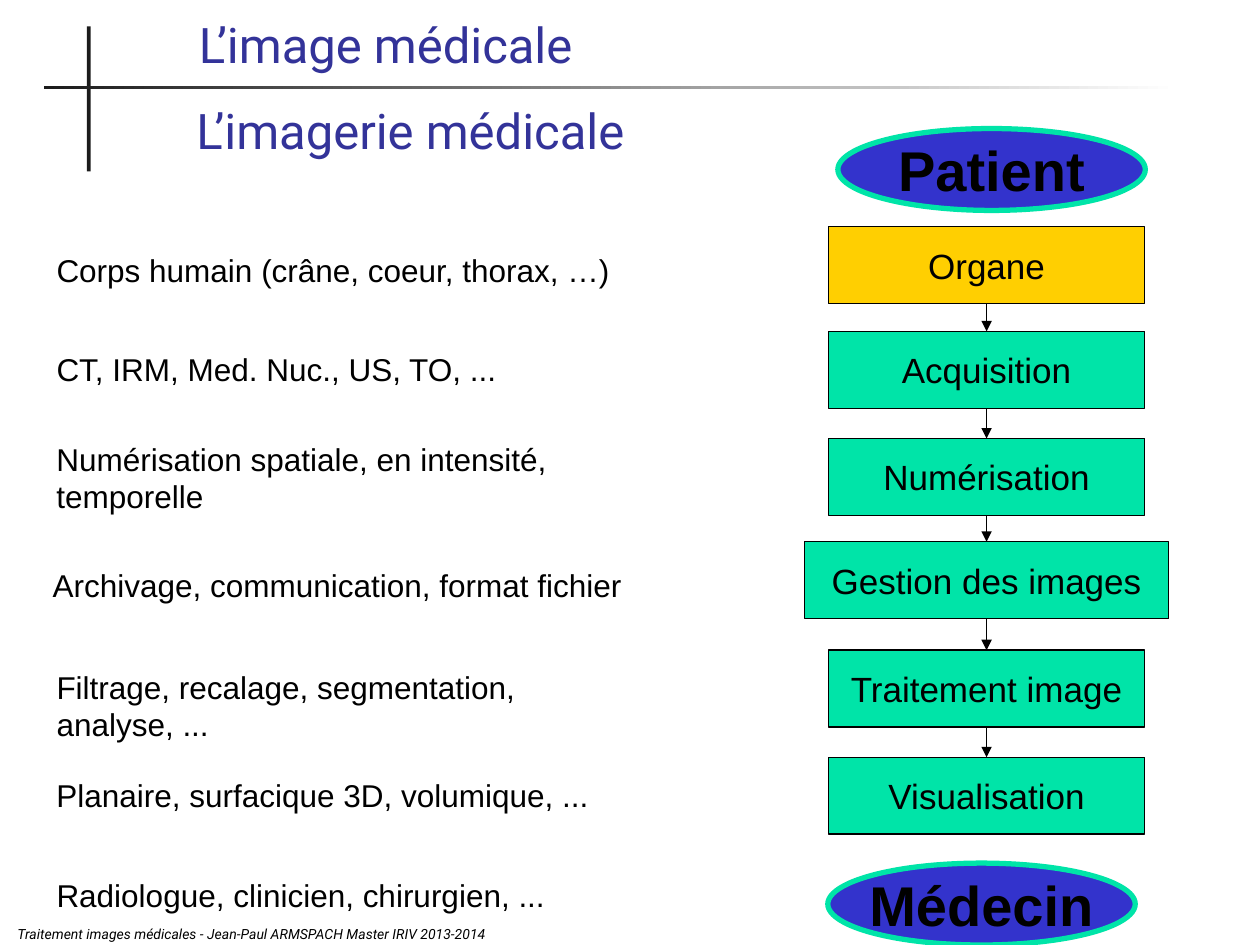
from dataclasses import dataclass

from lxml import etree
from pptx import Presentation
from pptx.dml.color import RGBColor
from pptx.enum.shapes import MSO_CONNECTOR, MSO_SHAPE
from pptx.enum.text import MSO_ANCHOR, PP_ALIGN
from pptx.oxml.ns import qn
from pptx.util import Inches, Pt

RECT, PROCESS, OVAL = MSO_SHAPE.RECTANGLE, MSO_SHAPE.FLOWCHART_PROCESS, MSO_SHAPE.OVAL
STRAIGHT = MSO_CONNECTOR.STRAIGHT
TOP, MIDDLE, BOTTOM = MSO_ANCHOR.TOP, MSO_ANCHOR.MIDDLE, MSO_ANCHOR.BOTTOM
LEFT, CENTER = PP_ALIGN.LEFT, PP_ALIGN.CENTER


@dataclass(frozen=True)
class Theme:
    ink: str = "000000"
    rule: str = "1C1C1C"
    white: str = "FFFFFF"
    title: str = "333399"
    green: str = "00E4A8"
    yellow: str = "FFCF01"
    blue: str = "3333CC"
    head_font: str = "Roboto"
    body_font: str = "Arial"
    title_size: int = 28
    end_size: int = 32
    step_size: int = 20
    caption_size: int = 18
    footer_size: int = 8


@dataclass(frozen=True)
class Step:
    text: str
    top: float
    width: float = 2.51
    fill: str = Theme.green


@dataclass(frozen=True)
class Terminal:
    text: str
    left: float
    top: float


@dataclass(frozen=True)
class Caption:
    text: str
    top: float
    width: float
    left: float = 0.35
    height: float = 0.4


THEME = Theme()
FLOW_CENTER = 7.83
STEP_HEIGHT = 0.61

STEPS = [
    Step("Organe", 1.8, fill=THEME.yellow),
    Step("Acquisition", 2.63),
    Step("Numérisation", 3.48),
    Step("Gestion des images", 4.3, width=2.89),
    Step("Traitement image", 5.16),
    Step("Visualisation", 6.01),
]
TERMINALS = [Terminal("Patient", 6.65, 1.02), Terminal("Médecin", 6.57, 6.85)]
CAPTIONS = [
    Caption("Corps humain (crâne, coeur, thorax, …)", 1.94, 4.61),
    Caption("CT, IRM, Med. Nuc., US, TO, ...", 2.73, 3.88),
    Caption("Numérisation spatiale, en intensité, temporelle", 3.44, 4.8, height=0.71),
    Caption("Archivage, communication, format fichier", 4.44, 4.99, left=0.32),
    Caption("Filtrage, recalage, segmentation, analyse, ...", 5.25, 4.49, height=0.7),
    Caption("Planaire, surfacique 3D, volumique, ...", 6.11, 4.5),
    Caption("Radiologue, clinicien, chirurgien, ...", 6.9, 4.42),
]


def rgb(color: str) -> RGBColor:
    return RGBColor.from_string(color)


def write(sp, text: str, *, size: int, font: str = THEME.body_font,
          color: str = THEME.ink, bold: bool = False, italic: bool = False,
          align=LEFT, anchor=TOP, wrap: bool = True, spacing=None) -> None:
    tf = sp.text_frame
    tf.word_wrap = wrap
    tf.vertical_anchor = anchor
    p = tf.paragraphs[0]
    p.alignment = align
    p.line_spacing = spacing
    r = p.add_run()
    r.text = text
    r.font.name, r.font.size = font, Pt(size)
    r.font.bold, r.font.italic = bold, italic
    r.font.color.rgb = rgb(color)


def add_text(s, text: str, left: float, top: float, width: float,
             height: float, **style) -> None:
    box = s.shapes.add_textbox(Inches(left), Inches(top), Inches(width), Inches(height))
    write(box, text, **style)


def add_block(s, kind, left: float, top: float, width: float, height: float,
              fill: str, line: str | None = None, weight: float = 0.75):
    sp = s.shapes.add_shape(kind, Inches(left), Inches(top), Inches(width), Inches(height))
    sp.shadow.inherit = False
    sp.fill.solid()
    sp.fill.fore_color.rgb = rgb(fill)
    if line:
        sp.line.color.rgb = rgb(line)
        sp.line.width = Pt(weight)
    else:
        sp.line.fill.background()
    return sp


def add_step(s, step: Step):
    sp = add_block(s, PROCESS, FLOW_CENTER - step.width / 2, step.top,
                   step.width, STEP_HEIGHT, step.fill, THEME.ink)
    write(sp, step.text, size=THEME.step_size, align=CENTER, anchor=MIDDLE, wrap=False)
    return sp


def add_terminal(s, end: Terminal) -> None:
    sp = add_block(s, OVAL, end.left, end.top, 2.44, 0.65, THEME.blue, THEME.green, 3)
    write(sp, end.text, size=THEME.end_size, bold=True, align=CENTER,
          anchor=MIDDLE, wrap=False)


def add_arrow(s, upper, lower) -> None:
    cx = s.shapes.add_connector(STRAIGHT, 0, 0, 0, 0)
    cx.begin_connect(upper, 2)
    cx.end_connect(lower, 0)
    cx.line.color.rgb = rgb(THEME.ink)
    cx.line.width = Pt(0.75)
    etree.SubElement(cx.line._get_or_add_ln(), qn("a:tailEnd"), type="triangle")
    etree.SubElement(cx._element.spPr, qn("a:effectLst"))


def add_cross(s) -> None:
    add_block(s, RECT, 0.69, 0.21, 0.03, 1.15, THEME.rule)
    bar = add_block(s, RECT, 0.35, 0.68, 9, 0.03, THEME.rule)
    bar.fill.gradient()
    bar.fill.gradient_angle = 0
    for stop, color in zip(bar.fill.gradient_stops, (THEME.rule, THEME.white)):
        stop.color.rgb = rgb(color)


def main() -> None:
    prs = Presentation()
    prs.slide_width, prs.slide_height = Inches(10), Inches(7.5)
    s = prs.slides.add_slide(prs.slide_layouts[6])

    # Header and footer
    add_cross(s)
    heading = dict(size=THEME.title_size, font=THEME.head_font,
                   color=THEME.title, anchor=BOTTOM)
    add_text(s, "L’image médicale", 1.48, 0, 8.52, 0.63, **heading)
    add_text(s, "L’imagerie médicale", 1.46, 0.76, 8.54, 0.55, spacing=0.8, **heading)
    add_text(s, "Traitement images médicales - Jean-Paul ARMSPACH Master IRIV 2013-2014",
             0.04, 7.37, 5.12, 0.16, size=THEME.footer_size,
             font=THEME.head_font, italic=True, anchor=BOTTOM)

    # Captions on the left
    for c in CAPTIONS:
        add_text(s, c.text, c.left, c.top, c.width, c.height, size=THEME.caption_size)

    # Flow from patient to physician
    for end in TERMINALS:
        add_terminal(s, end)
    boxes = [add_step(s, step) for step in STEPS]
    for upper, lower in zip(boxes, boxes[1:]):
        add_arrow(s, upper, lower)

    prs.save("out.pptx")


if __name__ == "__main__":
    main()
